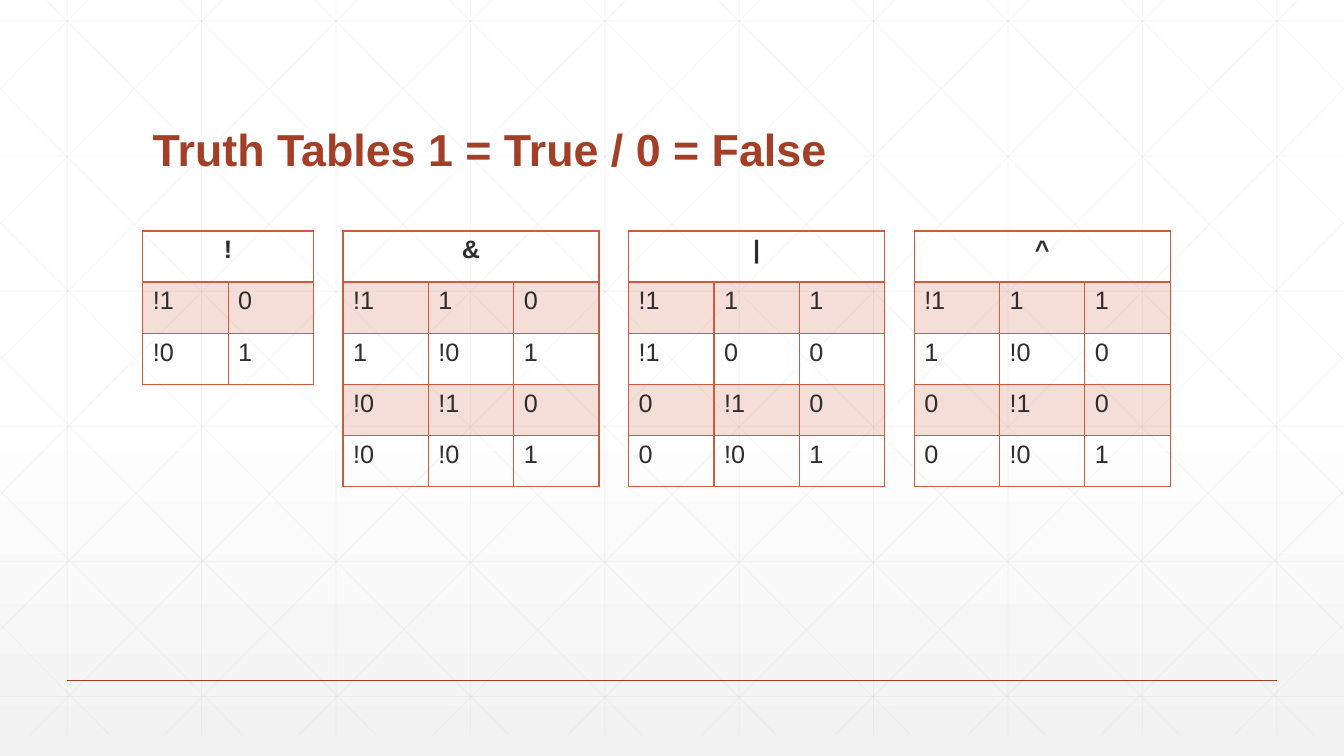
"""Build the truth table slide."""
from copy import deepcopy
from dataclasses import dataclass

from lxml.etree import SubElement
from pptx import Presentation
from pptx.dml.color import RGBColor
from pptx.enum.shapes import MSO_CONNECTOR
from pptx.enum.text import MSO_ANCHOR, PP_ALIGN
from pptx.oxml.ns import qn
from pptx.util import Pt

PX = 6350
WIDE, HIGH = 1920, 1080
TOP, BASE = -30, 1050
RUN = 1073
STEP = 192
COL, ROW, GAP = 122, 73, 42
LEFT, HEAD = 204, 330
INK, RUST, CORAL, GRAY = "2D2E2D", "A43F27", "D15A3E", "D9D9D9"


@dataclass(frozen=True)
class Truth:
    """Hold one truth table."""
    sign: str
    rows: tuple[str, ...]


@dataclass(frozen=True)
class Line:
    """Hold the two ends of a line in px."""
    x1: int
    y1: int
    x2: int
    y2: int


TABLES = (
    Truth("!", ("!1 0", "!0 1")),
    Truth("&", ("!1 1 0", "1 !0 1", "!0 !1 0", "!0 !0 1")),
    Truth("|", ("!1 1 1", "!1 0 0", "0 !1 0", "0 !0 1")),
    Truth("^", ("!1 1 1", "1 !0 0", "0 !1 0", "0 !0 1")),
)


def px(size: int) -> int:
    """Turn px into EMU."""
    return size * PX


def paint(color, code: str) -> None:
    """Set a color from a hex string."""
    color.rgb = RGBColor.from_string(code)


def fade(node, share: int) -> None:
    """Set the opacity of the color below a node, in percent."""
    for tint in node.iter(qn("a:srgbClr")):
        SubElement(tint, qn("a:alpha"), val=str(share * 1000))


def write(frame, text: str, *, size: int = 18, code: str = INK, bold: bool = False,
          align=PP_ALIGN.LEFT, space: float = 1.0) -> None:
    """Write one formatted line of text into a frame."""
    para = frame.paragraphs[0]
    para.alignment, para.line_spacing = align, space
    run = para.add_run()
    run.text = text
    run.font.name, run.font.size, run.font.bold = "Arial", Pt(size), bold
    paint(run.font.color, code)


def draw(shapes, line: Line, code: str, width: float, share: int = 100) -> None:
    """Draw a straight line."""
    link = shapes.add_connector(MSO_CONNECTOR.STRAIGHT, px(line.x1), px(line.y1),
                                px(line.x2), px(line.y2))
    link.line.width = Pt(width)
    paint(link.line.color, code)
    props = link.element.spPr
    if share < 100:
        fade(props, share)
    SubElement(props, qn("a:effectLst"))


def lattice() -> list[Line]:
    """Work out the lines of the backdrop grid."""
    lines = [Line(x, TOP, x, BASE) for x in range(96, WIDE, STEP)]
    lines += [Line(0, y, WIDE, y) for y in range(30, HIGH, 193)]
    rise = (BASE - TOP) / RUN
    slants = []
    for x in range(36, WIDE, STEP):
        span = min(RUN, WIDE - x)
        slants.append(Line(x, TOP, x + span, TOP + round(span * rise)))
    slants += [Line(x, BASE, 0, BASE - round(x * rise)) for x in range(917, 0, -190)]
    flips = [Line(WIDE - s.x1, s.y1, WIDE - s.x2, s.y2) for s in slants]
    return lines + slants + flips


def shade(slide) -> None:
    """Fill the backdrop with a soft gradient."""
    fill = slide.background.fill
    fill.gradient()
    fill.gradient_angle = 270
    stops = next(slide.element.iter(qn("a:gsLst")))
    stops.append(deepcopy(stops[-1]))
    marks = ((0, "FFFFFF"), (0.53, "FFFFFF"), (1, "F2F2F2"))
    for stop, (place, code) in zip(fill.gradient_stops, marks):
        stop.position = place
        paint(stop.color, code)


def edge(cell, row: int) -> None:
    """Give a cell its borders, with a thick rule below the header."""
    props = cell._tc.get_or_add_tcPr()
    thick = {0: "lnB", 1: "lnT"}.get(row)
    for side in ("lnL", "lnR", "lnT", "lnB"):
        width = Pt(2 if side == thick else 1)
        line = SubElement(props, qn(f"a:{side}"), w=str(width))
        fill = SubElement(line, qn("a:solidFill"))
        SubElement(fill, qn("a:srgbClr"), val=CORAL)


def tint(cell, row: int) -> None:
    """Fill odd rows and leave the others clear."""
    if row % 2:
        cell.fill.solid()
        paint(cell.fill.fore_color, CORAL)
        fade(cell._tc.tcPr.find(qn("a:solidFill")), 20)
    else:
        cell.fill.background()


def chart(shapes, truth: Truth, left: int) -> int:
    """Draw a truth table and return its right side."""
    body = [row.split() for row in truth.rows]
    cols, rows = len(body[0]), len(body) + 1
    wide = cols * COL
    table = shapes.add_table(rows, cols, px(left), px(HEAD), px(wide), px(rows * ROW)).table
    table.horz_banding = False
    table.first_row = False
    for r in range(rows):
        for c in range(cols):
            cell = table.cell(r, c)
            edge(cell, r)
            tint(cell, r)
            if r:
                write(cell.text_frame, body[r - 1][c])
    first = table.cell(0, 0)
    first.merge(table.cell(0, cols - 1))
    write(first.text_frame, truth.sign, bold=True, align=PP_ALIGN.CENTER)
    return left + wide


def main() -> None:
    """Build and save the slide."""
    deck = Presentation()
    deck.slide_width, deck.slide_height = px(WIDE), px(HIGH)
    slide = deck.slides.add_slide(deck.slide_layouts[6])
    shade(slide)
    grid = slide.shapes.add_group_shape().shapes
    for line in lattice():
        draw(grid, line, GRAY, 0.5, 25)
    draw(slide.shapes, Line(96, 972, 1824, 972), RUST, 1)
    frame = slide.shapes.add_textbox(px(LEFT), px(79), px(1512), px(180)).text_frame
    frame.word_wrap = True
    frame.vertical_anchor = MSO_ANCHOR.BOTTOM
    write(frame, "Truth Tables 1 = True / 0 = False", size=32, code=RUST, bold=True, space=0.9)
    left = LEFT
    for truth in TABLES:
        left = chart(slide.shapes, truth, left) + GAP
    deck.save("out.pptx")


if __name__ == "__main__":
    main()
